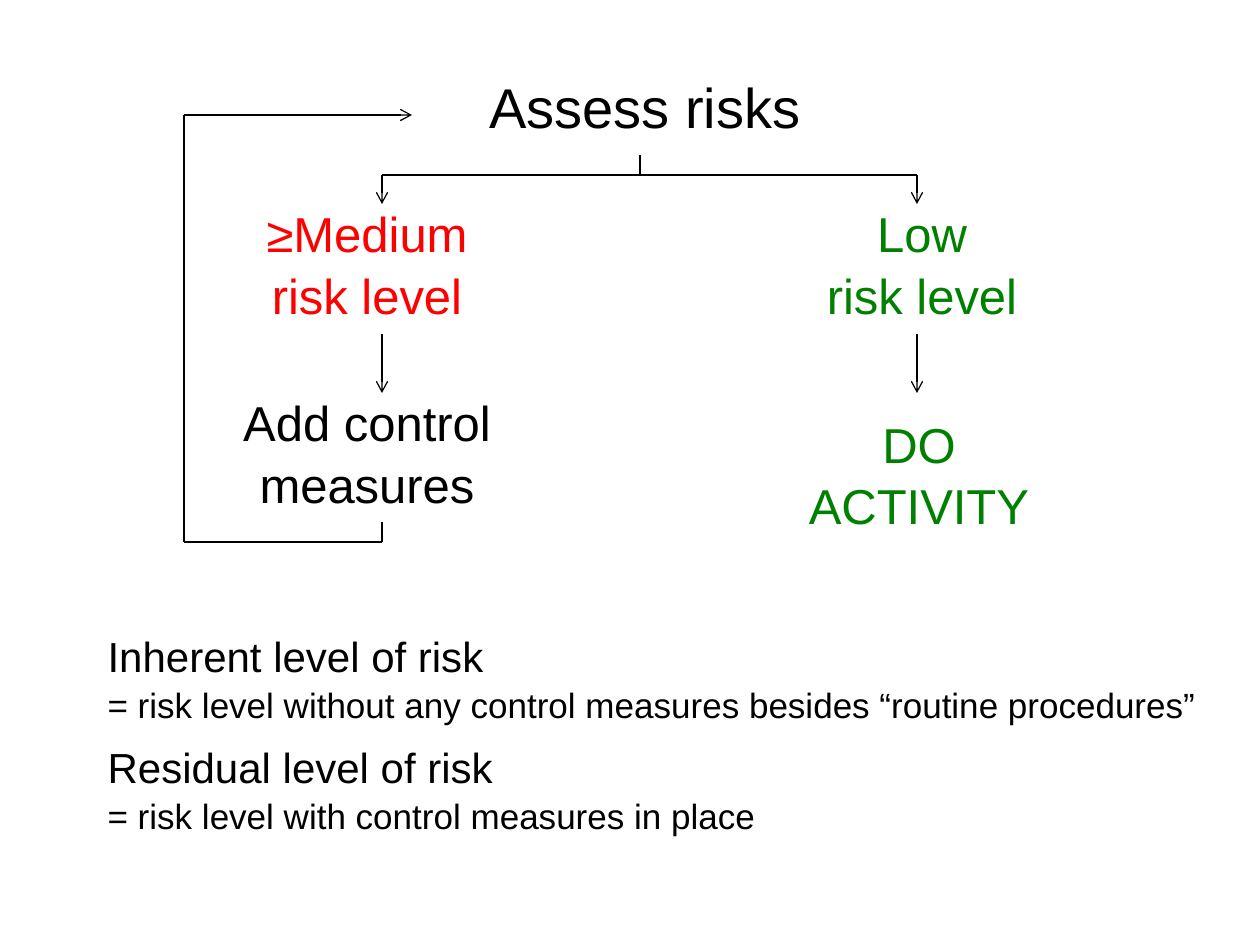
import pptx
import pptx.util
import pptx.dml.color
import pptx.enum.shapes
import pptx.enum.text
import pptx.oxml
import pptx.oxml.ns

PX = 914400 / 126
INK = {"black": "000000", "red": "FF0000", "green": "008000"}
ALIGN = pptx.enum.text.PP_ALIGN
ANCHOR = pptx.enum.text.MSO_ANCHOR


def emu(px):
    return pptx.util.Emu(round(px * PX))


def rgb(name):
    return pptx.dml.color.RGBColor.from_string(INK[name])


class Deck:
    font = "Arial"
    lead = 1.05

    def __init__(self, file):
        self.slide = file.slides.add_slide(file.slide_layouts[1])

    def place(self, shape, x, y, w, h):
        shape.left, shape.top = emu(x), emu(y)
        shape.width, shape.height = emu(w), emu(h)

    def letter(self, shape, lines, align, anchor):
        """Fill a shape with lines of (text, size, ink, gap before)."""
        frame = shape.text_frame
        frame.word_wrap = True
        frame.auto_size = pptx.enum.text.MSO_AUTO_SIZE.NONE
        frame.vertical_anchor = anchor
        for i, (text, size, ink, gap) in enumerate(lines):
            para = frame.add_paragraph() if i else frame.paragraphs[0]
            para.alignment = align
            para.line_spacing = self.lead
            para.space_before = pptx.util.Pt(gap)
            run = para.add_run()
            run.text = text
            run.font.name = self.font
            run.font.size = pptx.util.Pt(size)
            run.font.color.rgb = rgb(ink)

    def title(self, text, *box):
        shape = self.slide.shapes.title
        self.place(shape, *box)
        self.letter(shape, [(text, 32, "black", 0)],
                    ALIGN.CENTER, ANCHOR.MIDDLE)

    def body(self, lines, *box):
        shape = self.slide.placeholders[1]
        self.place(shape, *box)
        self.letter(shape, lines, ALIGN.LEFT, ANCHOR.TOP)
        for para in shape.text_frame.paragraphs:
            props = para._p.get_or_add_pPr()
            props.set("marL", "0")
            props.set("indent", "0")
            props.append(pptx.oxml.parse_xml(
                f'<a:buNone {pptx.oxml.ns.nsdecls("a")}/>'))

    def label(self, lines, ink, *box):
        shape = self.slide.shapes.add_textbox(*map(emu, box))
        self.letter(shape, [(text, 28, ink, 0) for text in lines],
                    ALIGN.CENTER, ANCHOR.MIDDLE)

    def line(self, x1, y1, x2, y2, head=False):
        wire = self.slide.shapes.add_connector(
            pptx.enum.shapes.MSO_CONNECTOR.STRAIGHT,
            *map(emu, (x1, y1, x2, y2)))
        wire.line.color.rgb = rgb("black")
        wire.line.width = pptx.util.Pt(0.75)
        space = pptx.oxml.ns.nsdecls("a")
        props = wire._element.spPr
        if head:
            props.get_or_add_ln().append(
                pptx.oxml.parse_xml(f'<a:tailEnd {space} type="arrow"/>'))
        props.append(pptx.oxml.parse_xml(f"<a:effectLst {space}/>"))


def main():
    file = pptx.Presentation()
    file.slide_width, file.slide_height = emu(1260), emu(945)
    deck = Deck(file)

    # Heading and the steps of the flow
    deck.title("Assess risks", 412, 66, 466, 77)
    deck.label(["≥Medium", "risk level"], "red", 134, 224, 466, 77)
    deck.label(["Low", "risk level"], "green", 689, 224, 466, 77)
    deck.label(["Add control measures"], "black", 134, 413, 466, 77)
    deck.label(["DO", "ACTIVITY"], "green", 740, 415, 358, 116)

    # Fork into two branches
    left, right, fork = 382, 917, 175
    deck.line(640, 155, 640, fork)
    deck.line(left, fork, right, fork)
    for x in (left, right):
        deck.line(x, fork, x, 204, head=True)
        deck.line(x, 334, x, 393, head=True)

    # Loop back to the heading
    edge, top, low = 184, 115, 542
    deck.line(left, 522, left, low)
    deck.line(edge, low, left, low)
    deck.line(edge, top, edge, low)
    deck.line(edge, top, 412, top, head=True)

    # Definitions
    deck.body([
        ("Inherent level of risk", 24, "black", 0),
        ("= risk level without any control measures besides "
         "“routine procedures”", 20, "black", 0),
        ("Residual level of risk", 24, "black", 8),
        ("= risk level with control measures in place", 20, "black", 0),
    ], 95, 622, 1121, 238)

    file.save("out.pptx")


if __name__ == "__main__":
    main()
